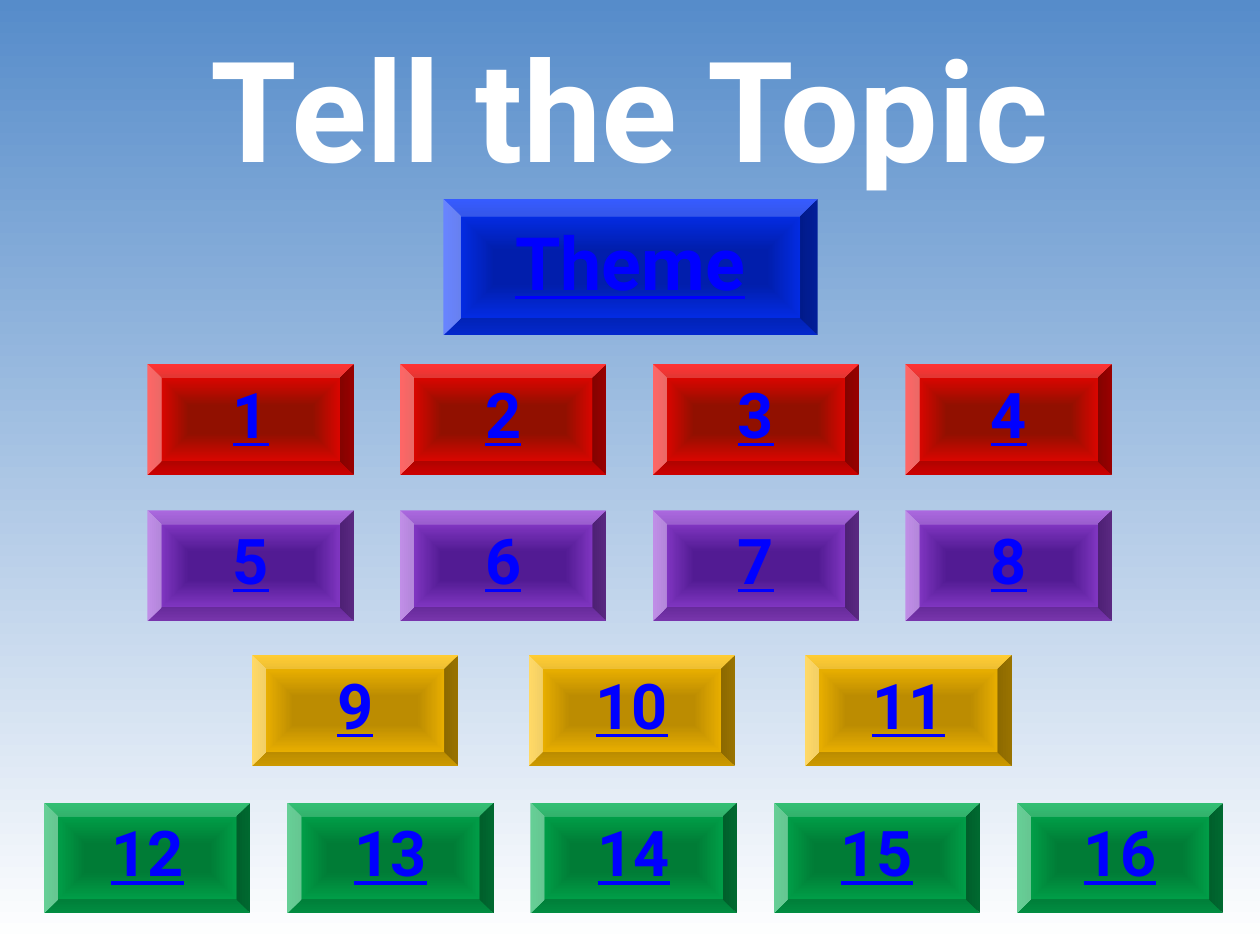
"""Build the Tell the Topic game board: a title, a theme button and sixteen numbered buttons."""
from lxml import etree
from pptx import Presentation, util as u
from pptx.dml.color import RGBColor
from pptx.enum import shapes, text
from pptx.oxml import ns

presentation = Presentation()
presentation.slide_width, presentation.slide_height = u.Inches(10), u.Inches(7.5)
column, row = presentation.slide_width / 100, presentation.slide_height / 100
slide = presentation.slides.add_slide(presentation.slide_layouts[6])


def add_label(container, words, left, top, width, height, size, color, underline=True):
    """Add centred bold text, placed in hundredths of the slide."""
    box = container.add_textbox(int(left * column), int(top * row), int(width * column), int(height * row))
    frame = box.text_frame
    frame.word_wrap = True
    frame.vertical_anchor = text.MSO_ANCHOR.MIDDLE
    frame.margin_left = frame.margin_right = frame.margin_top = frame.margin_bottom = 0
    paragraph = frame.paragraphs[0]
    paragraph.text = words
    paragraph.alignment = text.PP_ALIGN.CENTER
    font = paragraph.font
    font.name, font.size, font.bold, font.underline = "Roboto", u.Pt(size), True, underline
    font.color.rgb = RGBColor.from_string(color)
    for run in paragraph.runs:
        run.font.underline = underline


def set_gradient(fill, stops):
    """Fill with a gradient of (position, colour) stops."""
    fill.gradient()
    for stop, (position, color) in zip(fill.gradient_stops, stops):
        stop.position = position
        stop.color.rgb = RGBColor.from_string(color)


set_gradient(slide.background.fill, [(0, "FFFFFF"), (1, "568CCA")])
slide.background.fill.gradient_angle = 90
add_label(slide.shapes, "Tell the Topic", 5, -2.27, 90, 27.07, 80, "FFFFFF", False)

buttons = [("Theme", 35.2, 21.07, 29.7, 14.4, "011EAC", "0432FF", (37, 22.93, 26, 9.33), 42)]
button_rows = [
    (4, 11.7, 20.05, 38.53, "911000", "FF0000"),
    (4, 11.7, 20.05, 54, "521B93", "9743D8"),
    (3, 20, 21.95, 69.33, "BC8C01", "FFC000"),
    (5, 3.5, 19.3, 84.93, "007C36", "00B050"),
]
number = 1
for count, first, pitch, top, inner, outer in button_rows:
    for index in range(count):
        left = first + index * pitch
        label_area = (left + 0.3, top + 1.1, 15.8, 8.13)
        buttons.append((str(number), left, top, 16.4, 11.73, inner, outer, label_area, 36))
        number += 1

for words, left, top, width, height, inner, outer, label_area, size in buttons:
    group = slide.shapes.add_group_shape()
    shape = group.shapes.add_shape(shapes.MSO_SHAPE.BEVEL, int(left * column), int(top * row),
                                   int(width * column), int(height * row))
    shape.shadow.inherit = False
    shape.line.fill.background()
    set_gradient(shape.fill, [(0.25, inner), (1, outer)])
    linear = shape.element.spPr.find(".//" + ns.qn("a:lin"))
    gradient = linear.getparent()
    gradient.remove(linear)
    shade = etree.SubElement(gradient, ns.qn("a:path"), {"path": "shape"})
    etree.SubElement(shade, ns.qn("a:fillToRect"), dict.fromkeys("ltrb", "50000"))
    add_label(group.shapes, words, *label_area, size, "0000FF")

presentation.save("out.pptx")
